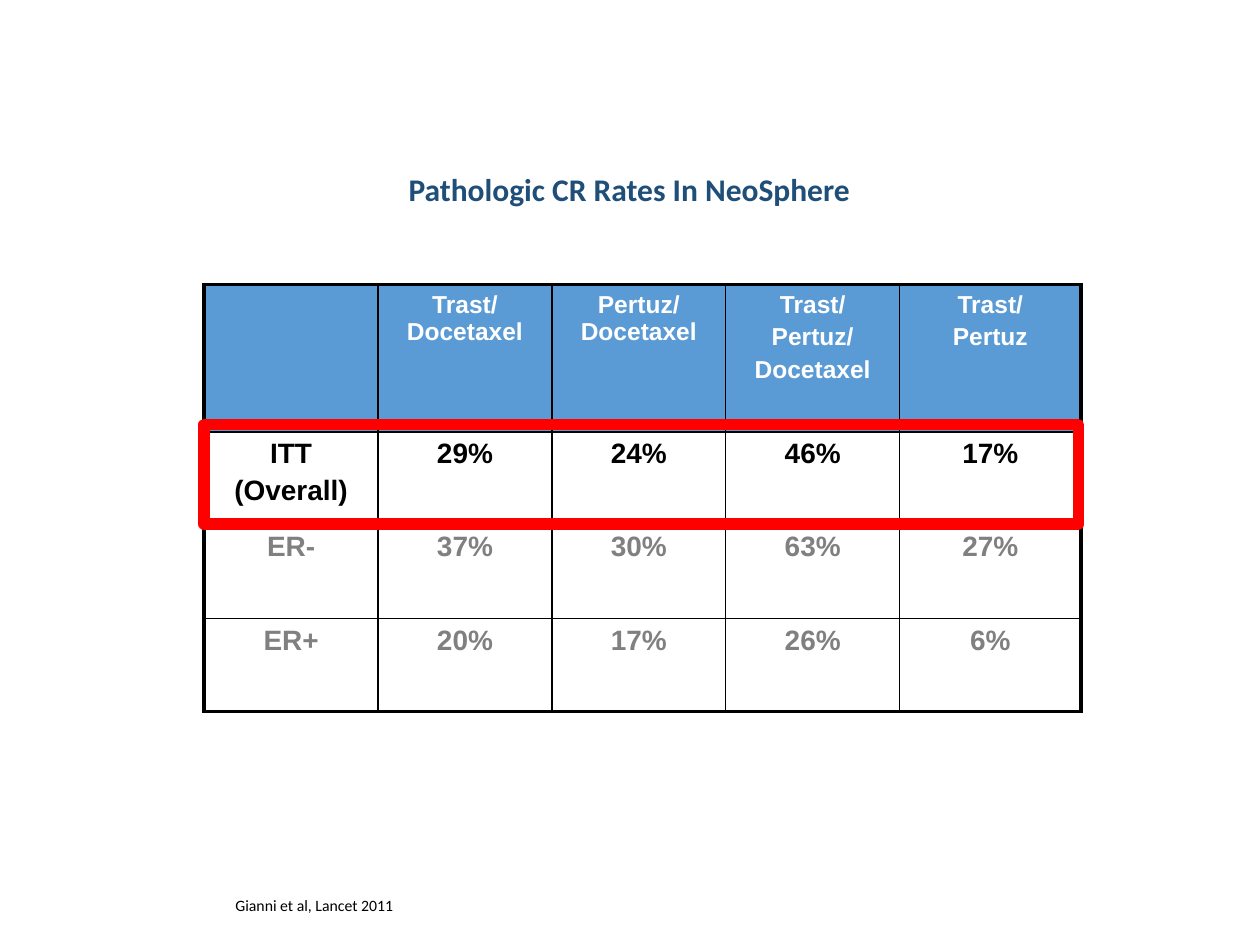
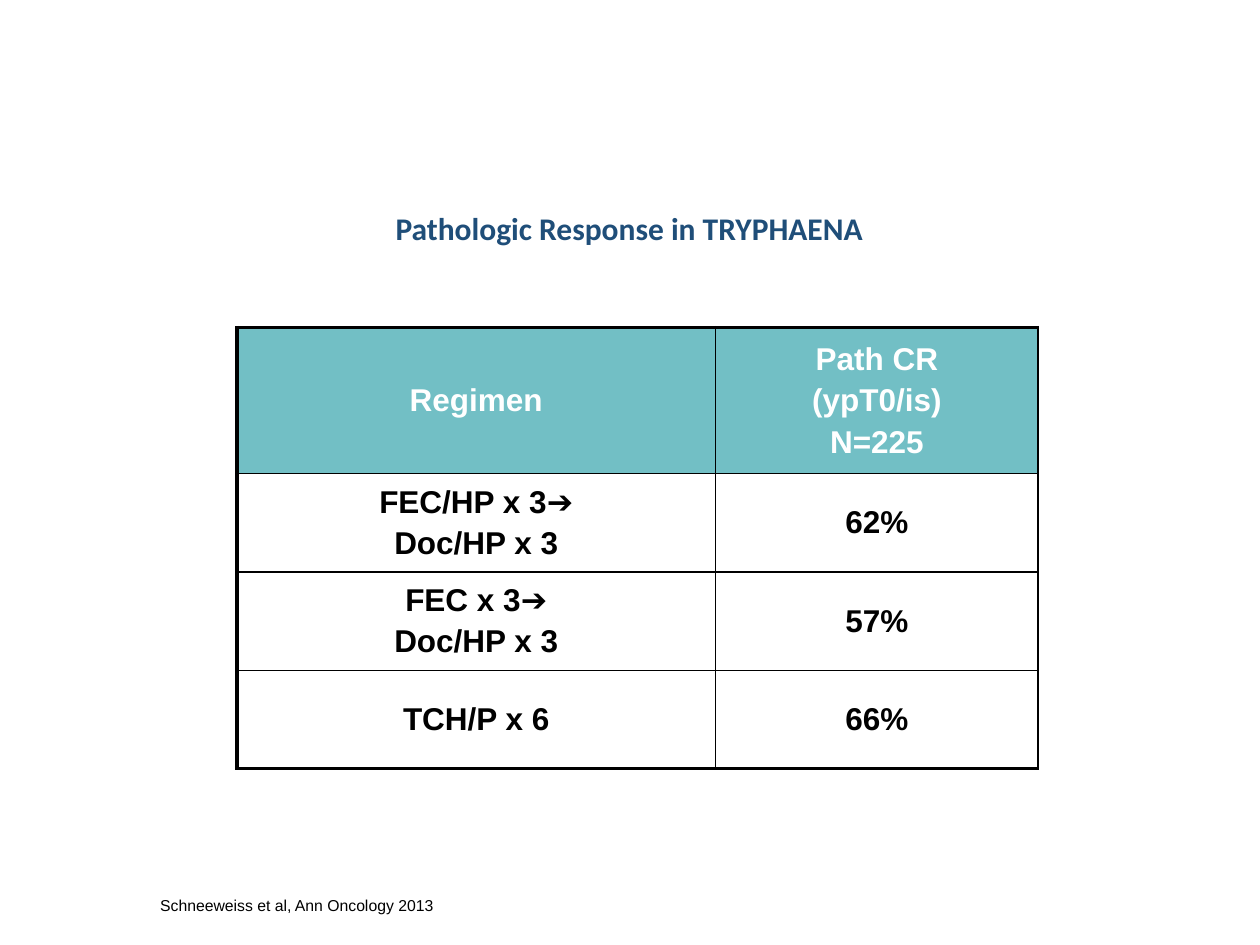
"""Build two slides of pathologic response tables."""
import pptx
import pptx.dml.color
import pptx.enum.shapes
import pptx.enum.text
import pptx.oxml
import pptx.oxml.ns
import pptx.util

Inches = pptx.util.Inches
Pt = pptx.util.Pt
ALIGN = pptx.enum.text.PP_ALIGN
ANCHOR = pptx.enum.text.MSO_ANCHOR

COLORS = {
    "title": "1F4E79",
    "blue": "5B9BD5",
    "teal": "72BFC5",
    "red": "FF0000",
    "muted": "808080",
    "white": "FFFFFF",
    "black": "000000",
}
THIN, THICK = 1, 2.25


def rgb(name):
    """Return the named colour as an RGB value."""
    return pptx.dml.color.RGBColor.from_string(COLORS[name])


def write(tf, text, font="Arial", size=18, color="black", bold=False,
          align=ALIGN.CENTER, spacing=None, gap=0):
    """Write one paragraph per line of text in the given format."""
    for i, line in enumerate(text.split("\n")):
        p = tf.add_paragraph() if i else tf.paragraphs[0]
        p.alignment = align
        p.line_spacing = spacing
        p.space_before = Pt(gap if i else 0)
        r = p.add_run()
        r.text = line
        r.font.name = font
        r.font.size = Pt(size)
        r.font.bold = bold
        r.font.color.rgb = rgb(color)


def set_borders(cell, widths):
    """Draw the cell borders, given as a dict of side to points."""
    tc_pr = cell._tc.get_or_add_tcPr()
    for i, side in enumerate("LRTB"):
        ln = pptx.oxml.parse_xml(
            f'<a:ln{side} {pptx.oxml.ns.nsdecls("a")} w="{Pt(widths[side])}">'
            f'<a:solidFill><a:srgbClr val="{COLORS["black"]}"/></a:solidFill>'
            f'</a:ln{side}>')
        tc_pr.insert(i, ln)


class Deck:
    """Hold the presentation, its style and the current slide."""

    def __init__(self):
        """Start an empty 10 by 7.5 inch presentation."""
        self.prs = pptx.Presentation()
        self.prs.slide_width = Inches(10)
        self.prs.slide_height = Inches(7.5)
        self.s = None

    def slide(self, title, top, height):
        """Add a slide with its title."""
        self.s = self.prs.slides.add_slide(self.prs.slide_layouts[5])
        sp = self.s.shapes.title
        sp.left, sp.top = Inches(1.62), Inches(top)
        sp.width, sp.height = Inches(6.75), Inches(height)
        tf = sp.text_frame
        tf.vertical_anchor = ANCHOR.MIDDLE
        write(tf, title, font="Calibri", color="title", bold=True, spacing=0.9)

    def table(self, left, top, cols, heights, rows, fill, formats, anchor,
              right=THICK):
        """Add a framed table with a filled header row."""
        frame = self.s.shapes.add_table(
            len(rows), len(cols), Inches(left), Inches(top),
            Inches(sum(cols)), Inches(sum(heights)))
        table = frame.table
        table.first_row = table.horz_banding = False
        for col, width in zip(table.columns, cols):
            col.width = Inches(width)
        for i, (values, height) in enumerate(zip(rows, heights)):
            table.rows[i].height = Inches(height)
            for j, text in enumerate(values):
                cell = table.cell(i, j)
                cell.margin_left = cell.margin_right = Inches(0.07)
                cell.margin_top = cell.margin_bottom = Inches(0.05)
                cell.vertical_anchor = anchor
                if i == 0:
                    cell.fill.solid()
                    cell.fill.fore_color.rgb = rgb(fill)
                else:
                    cell.fill.background()
                set_borders(cell, {
                    "L": THIN if j else THICK,
                    "R": right if j == len(cols) - 1 else THIN,
                    "T": THIN if i else THICK,
                    "B": THICK if i == len(rows) - 1 else THIN,
                })
                if text:
                    size, color = formats[i]
                    write(cell.text_frame, text, size=size, color=color,
                          bold=True, gap=size * 0.2)

    def highlight(self, left, top, width, height):
        """Add an unfilled red frame."""
        sp = self.s.shapes.add_shape(
            pptx.enum.shapes.MSO_SHAPE.RECTANGLE,
            Inches(left), Inches(top), Inches(width), Inches(height))
        sp.shadow.inherit = False
        sp.fill.background()
        sp.line.color.rgb = rgb("red")
        sp.line.width = Pt(6.5)

    def citation(self, text, left, width, font, align):
        """Add the source line at the foot of the slide."""
        sp = self.s.shapes.add_textbox(
            Inches(left), Inches(7.06), Inches(width), Inches(0.25))
        tf = sp.text_frame
        tf.word_wrap = False
        tf.auto_size = pptx.enum.text.MSO_AUTO_SIZE.SHAPE_TO_FIT_TEXT
        write(tf, text, font=font, size=9, align=align)


def main():
    """Build both slides and save them."""
    deck = Deck()

    deck.slide("Pathologic CR Rates In NeoSphere", 1.28, 0.47)
    deck.table(
        1.62, 2.26, [1.38] * 4 + [1.44], [1.17] + [0.74] * 3,
        [["", "Trast/ Docetaxel", "Pertuz/ Docetaxel",
          "Trast/\nPertuz/\nDocetaxel", "Trast/\nPertuz"],
         ["ITT\n(Overall)", "29%", "24%", "46%", "17%"],
         ["ER-", "37%", "30%", "63%", "27%"],
         ["ER+", "20%", "17%", "26%", "6%"]],
        "blue", [(14, "white"), (16, "black")] + [(16, "muted")] * 2,
        ANCHOR.TOP)
    deck.highlight(1.62, 3.37, 6.94, 0.79)
    deck.citation("Gianni et al, Lancet 2011", 1.77, 1.47, "Calibri",
                  ALIGN.LEFT)

    deck.slide("Pathologic Response in TRYPHAENA", 1.56, 0.53)
    deck.table(
        1.88, 2.6, [3.8, 2.56], [1.16] + [0.78] * 3,
        [["Regimen", "Path CR\n(ypT0/is)\nN=225"],
         ["FEC/HP x 3➔\nDoc/HP x 3", "62%"],
         ["FEC x 3➔\nDoc/HP x 3", "57%"],
         ["TCH/P x 6", "66%"]],
        "teal", [(18, "white")] + [(18, "black")] * 3, ANCHOR.MIDDLE,
        right=THIN)
    deck.citation("Schneeweiss et al, Ann Oncology 2013", 1.14, 2.43, "Arial",
                  ALIGN.CENTER)

    deck.prs.save("out.pptx")


if __name__ == "__main__":
    main()
